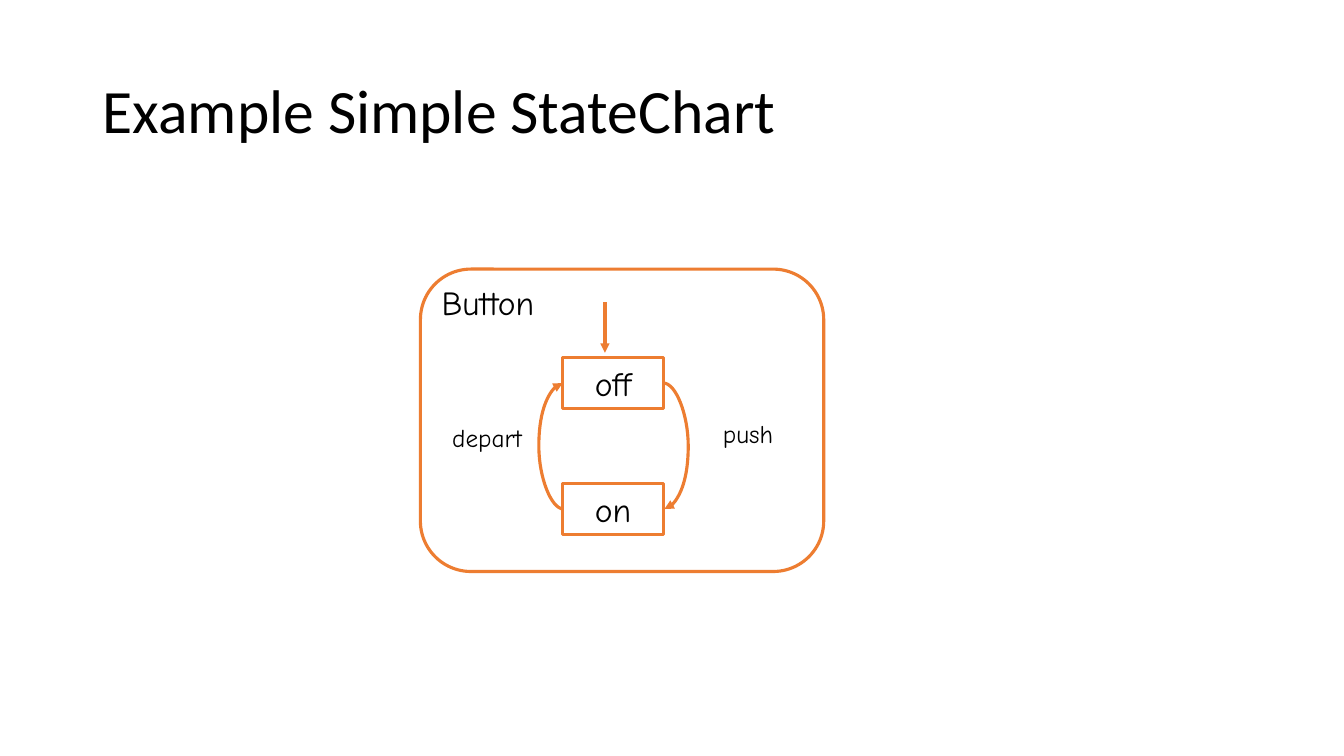
"""Build a slide with a simple statechart of a button."""
from dataclasses import dataclass

from lxml import etree
from pptx import Presentation
from pptx.dml.color import RGBColor
from pptx.enum.shapes import MSO_CONNECTOR, MSO_SHAPE
from pptx.enum.text import MSO_ANCHOR, MSO_AUTO_SIZE, PP_ALIGN
from pptx.oxml.ns import qn
from pptx.util import Inches, Pt

ORANGE = RGBColor(0xED, 0x7D, 0x31)
BLACK = RGBColor(0, 0, 0)
LINE_WIDTH = Pt(2.25)
TITLE_FONT = "Calibri"
CHART_FONT = "Comic Neue"
RECTANGLE = MSO_SHAPE.RECTANGLE
ROUNDED = MSO_SHAPE.ROUNDED_RECTANGLE
STRAIGHT = MSO_CONNECTOR.STRAIGHT
CURVED = MSO_CONNECTOR.CURVE
LEFT = PP_ALIGN.LEFT
CENTER = PP_ALIGN.CENTER
TOP = MSO_ANCHOR.TOP
MIDDLE = MSO_ANCHOR.MIDDLE
FIT_SHAPE = MSO_AUTO_SIZE.SHAPE_TO_FIT_TEXT

STATE_LEFT, STATE_WIDTH, STATE_HEIGHT = 5.58, 1, 0.5
OFF_TOP, ON_TOP = 3.55, 4.8
OFF_MIDDLE = OFF_TOP + STATE_HEIGHT / 2
ON_MIDDLE = ON_TOP + STATE_HEIGHT / 2
CURVE_WIDTH, CURVE_BULGE = 0.01, 0.25


@dataclass(frozen=True)
class State:
    name: str
    top: float


@dataclass(frozen=True)
class Label:
    text: str
    left: float
    top: float
    width: float
    height: float
    size: int
    align: PP_ALIGN = CENTER
    font: str = CHART_FONT


@dataclass(frozen=True)
class Arrow:
    kind: MSO_CONNECTOR
    left: float
    top: float
    width: float
    height: float
    half_turn: bool = False


TITLE = Label("Example Simple StateChart", 0.92, 0.4, 11.5, 1.45, 44, LEFT, TITLE_FONT)
STATES = [State("off", OFF_TOP), State("on", ON_TOP)]
LABELS = [
    Label("push", 6.92, 4.1, 1, 0.4, 18),
    Label("depart", 4.33, 4.14, 1, 0.4, 18),
    Label(" Button", 4.17, 2.75, 1.5, 0.5, 24, LEFT),
]
TRANSITION_HEIGHT = ON_MIDDLE - OFF_MIDDLE
ARROWS = [
    Arrow(CURVED, STATE_LEFT + STATE_WIDTH, OFF_MIDDLE, CURVE_WIDTH, TRANSITION_HEIGHT),
    Arrow(CURVED, STATE_LEFT, OFF_MIDDLE, CURVE_WIDTH, TRANSITION_HEIGHT, True),
    Arrow(STRAIGHT, 6, 3, 0, 0.5),
]


def write_text(shape, text: str, size: int, font: str, align: PP_ALIGN) -> None:
    """Put one formatted paragraph into a shape."""
    frame = shape.text_frame
    frame.text = text
    frame.word_wrap = True
    frame.vertical_anchor = TOP
    para = frame.paragraphs[0]
    para.alignment = align
    span = para.runs[0].font
    span.name, span.size, span.color.rgb = font, Pt(size), BLACK


def add_label(page, label: Label):
    """Add a text box and return it."""
    box = page.shapes.add_textbox(
        Inches(label.left), Inches(label.top), Inches(label.width), Inches(label.height))
    write_text(box, label.text, label.size, label.font, label.align)
    return box


def add_outline(page, kind: MSO_SHAPE, left: float, top: float, width: float, height: float):
    """Add an unfilled shape with an orange border and return it."""
    shape = page.shapes.add_shape(
        kind, Inches(left), Inches(top), Inches(width), Inches(height))
    shape.shadow.inherit = False
    shape.fill.background()
    shape.line.color.rgb = ORANGE
    shape.line.width = LINE_WIDTH
    return shape


def add_arrow(page, arrow: Arrow) -> None:
    """Add a straight or curved connector with an arrowhead."""
    connector = page.shapes.add_connector(
        arrow.kind, Inches(arrow.left), Inches(arrow.top),
        Inches(arrow.left + arrow.width), Inches(arrow.top + arrow.height))
    connector.line.color.rgb = ORANGE
    connector.line.width = LINE_WIDTH
    properties = connector._element.spPr
    etree.SubElement(properties.find(qn("a:ln")), qn("a:tailEnd"), type="triangle")
    etree.SubElement(properties, qn("a:effectLst"))
    if arrow.half_turn:
        properties.find(qn("a:xfrm")).set("rot", "10800000")
    if arrow.kind == CURVED:
        guides = properties.find(qn("a:prstGeom")).get_or_add_avLst()
        bulge = round(CURVE_BULGE / CURVE_WIDTH * 100000)
        etree.SubElement(guides, qn("a:gd"), name="adj1", fmla=f"val {bulge}")


def main() -> None:
    """Draw the statechart and save the deck."""
    deck = Presentation()
    deck.slide_width, deck.slide_height = Inches(13.33), Inches(7.5)
    page = deck.slides.add_slide(deck.slide_layouts[6])

    title = add_label(page, TITLE)
    title.text_frame.vertical_anchor = MIDDLE
    title.text_frame.paragraphs[0].line_spacing = 0.9

    for state in STATES:
        box = add_outline(page, RECTANGLE, STATE_LEFT, state.top, STATE_WIDTH, STATE_HEIGHT)
        write_text(box, state.name, 24, CHART_FONT, CENTER)
        box.text_frame.auto_size = FIT_SHAPE
    for arrow in ARROWS:
        add_arrow(page, arrow)
    button = add_outline(page, ROUNDED, 4.17, 2.67, 4, 3)
    button.adjustments[0] = 0.167
    for label in LABELS:
        add_label(page, label).text_frame.auto_size = FIT_SHAPE

    deck.save("out.pptx")


if __name__ == "__main__":
    main()
